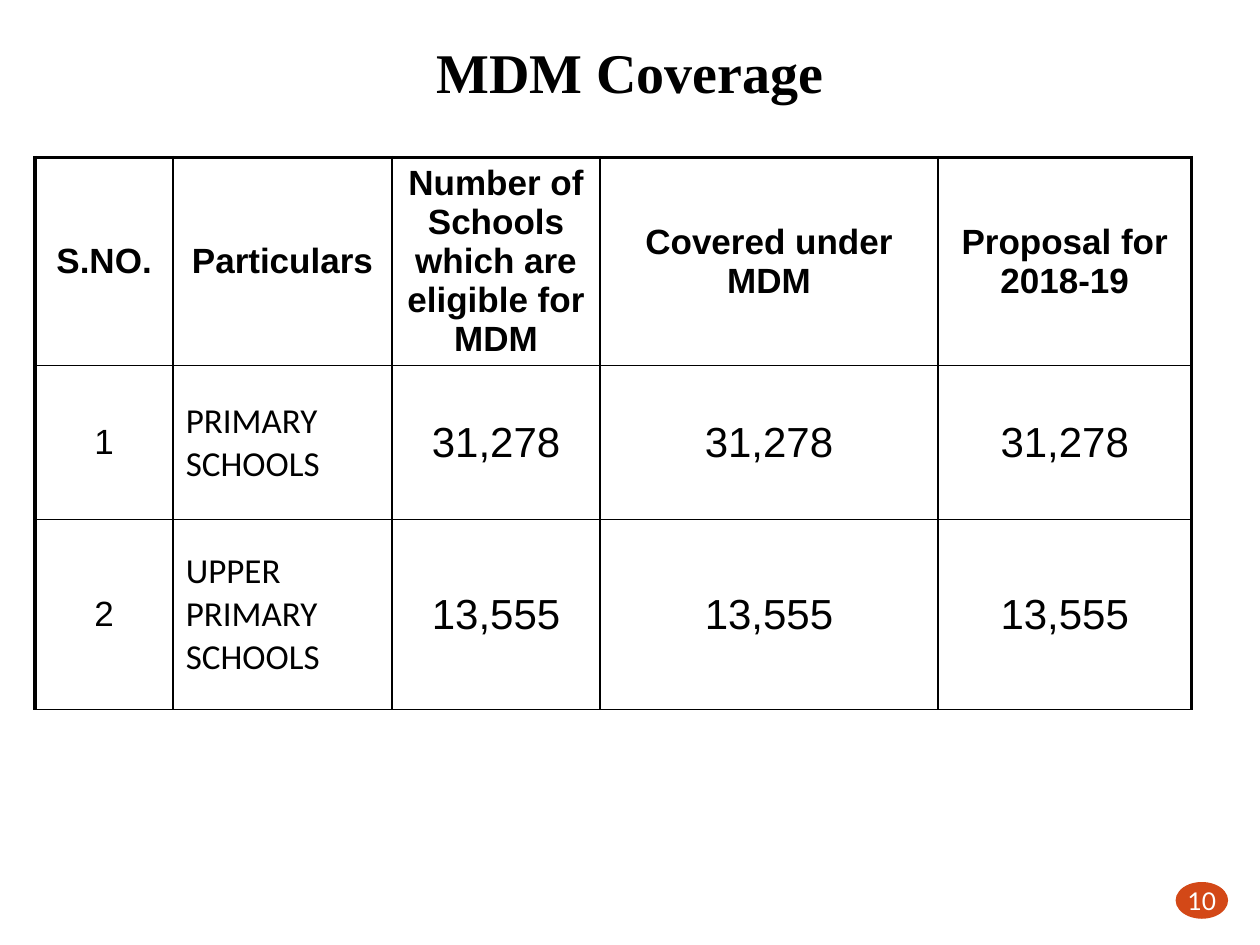
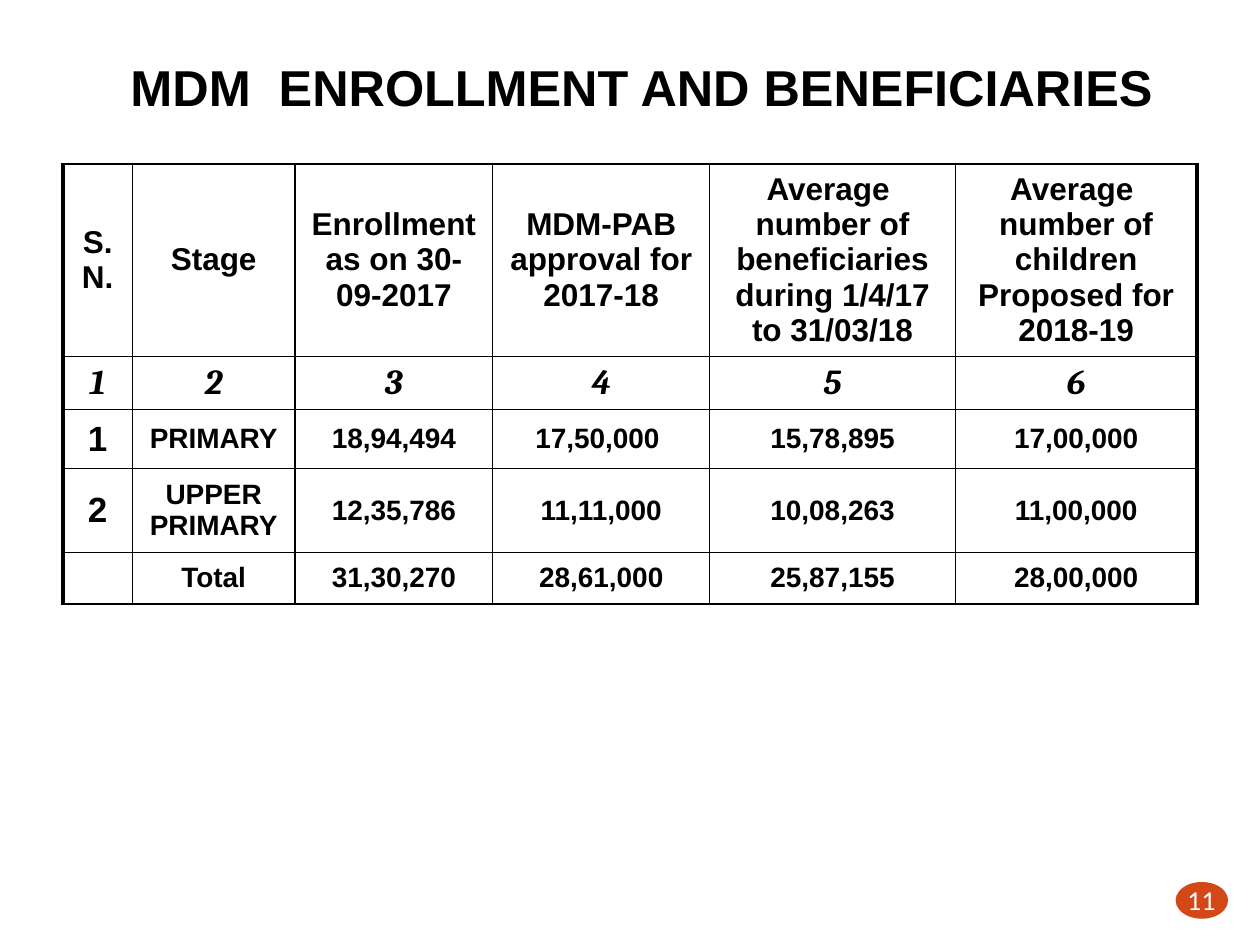
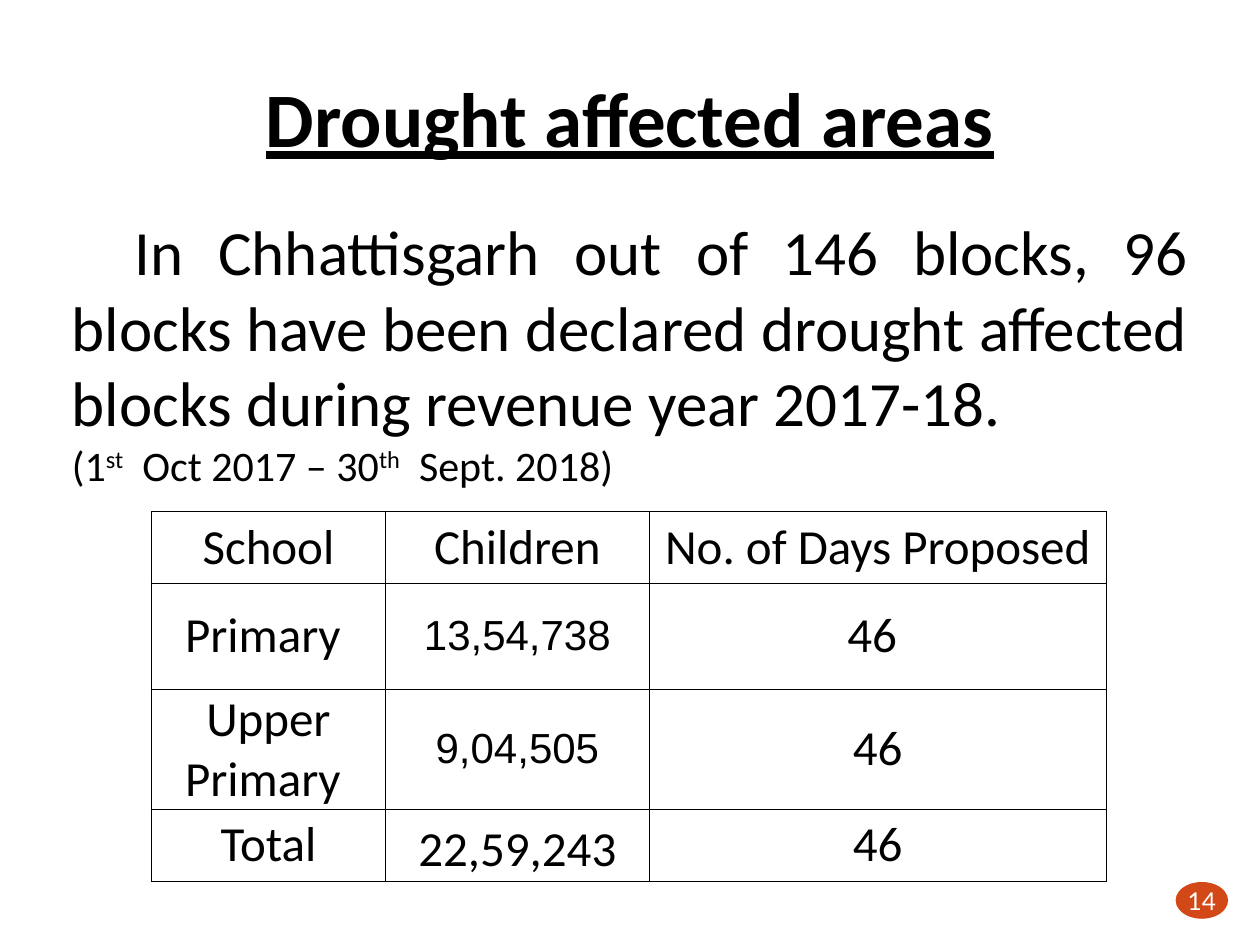
from dataclasses import dataclass

from lxml import etree
from pptx import Presentation
from pptx.dml.color import RGBColor
from pptx.enum import shapes, text
from pptx.oxml import ns
from pptx.util import Pt

CENTER, LEFT = text.PP_ALIGN.CENTER, text.PP_ALIGN.LEFT
MIDDLE, BOTTOM = text.MSO_ANCHOR.MIDDLE, text.MSO_ANCHOR.BOTTOM


@dataclass(frozen=True)
class Style:
    font: str
    size: float
    bold: bool = False
    italic: bool = False
    underline: bool = False
    align: int = CENTER
    anchor: int = MIDDLE


class Theme:
    ink = "000000"
    accent = "D34817"
    on_accent = "FFFFFF"
    styles = {
        "serif title": Style("Times New Roman", 32, bold=True),
        "sans title": Style("Arial", 28.8, bold=True),
        "underlined title": Style("Calibri", 44, bold=True, underline=True),
        "statement": Style("Calibri", 36),
        "period": Style("Calibri", 24),
        "badge": Style("Lato", 14),
        "large head": Style("Arial", 20, bold=True),
        "head": Style("Arial", 18, bold=True),
        "serial": Style("Arial", 20),
        "label": Style("Calibri", 20, align=LEFT),
        "count": Style("Arial", 24),
        "column number": Style("Cambria", 20, bold=True, italic=True),
        "bold serial": Style("Arial", 20, bold=True),
        "bold count": Style("Arial", 16, bold=True),
        "plain": Style("Calibri", 28),
        "plain low": Style("Calibri", 28, anchor=BOTTOM),
    }


# A row's styles apply from left to right; the last one fills the remaining columns.
COVERAGE = {
    "place": (20, 90), "widths": (79, 125, 119, 193, 145), "heights": (119, 88, 108.5),
    "line": 1, "edges": {"L": 2.25, "R": 2.25, "T": 2.25}, "inset": None,
    "rows": [
        (("S.NO.", "Particulars", "Number of Schools which are eligible for MDM",
          "Covered under MDM", "Proposal for 2018-19"), ["large head"]),
        (("1", "PRIMARY SCHOOLS", "31,278", "31,278", "31,278"),
         ["serial", "label", "count"]),
        (("2", "UPPER PRIMARY SCHOOLS", "13,555", "13,555", "13,555"),
         ["serial", "label", "count"]),
    ],
}
ENROLLMENT = {
    "place": (36, 93.6), "widths": (39.6, 93, 113, 124, 140.4, 138),
    "heights": (110, 30, 34, 48, 29),
    "line": 1, "edges": {"L": 2.25, "R": 2.25}, "inset": None,
    "rows": [
        (("S. N.", "Stage", "Enrollment as on 30-09-2017", "MDM-PAB approval for 2017-18",
          "Average  number of beneficiaries during 1/4/17 to 31/03/18",
          "Average  number of children Proposed for 2018-19"), ["head"]),
        (("1", "2", "3", "4", "5", "6"), ["column number"]),
        (("1", "PRIMARY", "18,94,494", "17,50,000 ", "15,78,895", "17,00,000"),
         ["bold serial", "bold count"]),
        (("2", "UPPER PRIMARY", "12,35,786", "11,11,000", "10,08,263", "11,00,000"),
         ["bold serial", "bold count"]),
        (("", "Total", "31,30,270", "28,61,000", "25,87,155", "28,00,000"), ["bold count"]),
    ],
}
DROUGHT = {
    "place": (86.4, 292.3), "widths": (134, 150.5, 261.4), "heights": (41, 60.5, 68, 41),
    "line": 0.5, "edges": {}, "inset": 0.7,
    "rows": [
        (("School", "Children", "No. of Days Proposed"), ["plain"]),
        (("Primary ", "13,54,738", "46 "), ["plain", "count", "plain"]),
        (("Upper Primary ", "9,04,505", "46"), ["plain", "count", "plain"]),
        (("Total", "22,59,243", "46"), ["plain", "plain low", "plain"]),
    ],
}
STATEMENT = ("\tIn Chhattisgarh out of 146 blocks, 96 blocks have been declared "
             "drought affected blocks during revenue year 2017-18. ")
PERIOD = [("(1", False), ("st", True), ("  Oct 2017 – 30", False),
          ("th", True), ("  Sept. 2018)", False)]
STATEMENT_BOX = (34, 118, 652, 211)

PAGES = [
    {"number": "10", "title": "MDM Coverage", "style": "serif title",
     "title_box": (36, 21.6, 648, 38), "table": COVERAGE},
    {"number": "11", "title": "MDM  ENROLLMENT AND BENEFICIARIES ", "style": "sans title",
     "title_box": (46.8, 21.6, 648, 56), "table": ENROLLMENT},
    {"number": "14", "title": "Drought affected areas", "style": "underlined title",
     "title_box": (36, 21.6, 648, 90), "table": DROUGHT, "statement": True},
]


def points(values):
    return [Pt(value) for value in values]


def format_para(para, style_name, color=Theme.ink, align=None):
    style = Theme.styles[style_name]
    para.alignment = style.align if align is None else align
    for span in para.runs:
        font = span.font
        font.name, font.size = style.font, Pt(style.size)
        font.bold, font.italic, font.underline = style.bold, style.italic, style.underline
        font.color.rgb = RGBColor.from_string(color)


def set_margins(target, value):
    target.margin_left = target.margin_right = Pt(value)
    target.margin_top = target.margin_bottom = Pt(value)


def add_title(page, content):
    title = page.shapes.title
    title.left, title.top, title.width, title.height = points(content["title_box"])
    frame = title.text_frame
    frame.text = content["title"]
    frame.auto_size = text.MSO_AUTO_SIZE.NONE
    frame.vertical_anchor = MIDDLE
    format_para(frame.paragraphs[0], content["style"])


def set_borders(cell, widths):
    properties = cell._tc.get_or_add_tcPr()
    for index, side in enumerate("LRTB"):
        line = etree.Element(ns.qn(f"a:ln{side}"), w=str(Pt(widths[side])))
        fill = etree.SubElement(line, ns.qn("a:solidFill"))
        etree.SubElement(fill, ns.qn("a:srgbClr"), val=Theme.ink)
        properties.insert(index, line)


def add_grid(page, grid):
    rows, widths, heights = grid["rows"], grid["widths"], grid["heights"]
    size = (sum(widths), sum(heights))
    table = page.shapes.add_table(len(rows), len(widths),
                                  *points(grid["place"] + size)).table
    table.first_row = table.horz_banding = False
    for column, width in zip(table.columns, widths):
        column.width = Pt(width)
    for r, (values, styles) in enumerate(rows):
        table.rows[r].height = Pt(heights[r])
        for c, value in enumerate(values):
            cell = table.cell(r, c)
            style_name = styles[min(c, len(styles) - 1)]
            cell.text = value
            cell.vertical_anchor = Theme.styles[style_name].anchor
            if grid["inset"] is not None:
                set_margins(cell, grid["inset"])
            format_para(cell.text_frame.paragraphs[0], style_name)
            cell.fill.background()
            outer = {"L": c == 0, "R": c == len(widths) - 1,
                     "T": r == 0, "B": r == len(rows) - 1}
            set_borders(cell, {side: grid["edges"].get(side, grid["line"])
                               if at_edge else grid["line"]
                               for side, at_edge in outer.items()})


def add_statement(page):
    frame = page.shapes.add_textbox(*points(STATEMENT_BOX)).text_frame
    frame.word_wrap = True
    frame.text = STATEMENT
    format_para(frame.paragraphs[0], "statement", align=text.PP_ALIGN.JUSTIFY)
    period = frame.add_paragraph()
    for wording, raised in PERIOD:
        span = period.add_run()
        span.text = wording
        if raised:
            span._r.get_or_add_rPr().set("baseline", "30000")
    format_para(period, "period", align=text.PP_ALIGN.JUSTIFY)


def add_badge(page, number):
    badge = page.shapes.add_shape(shapes.MSO_SHAPE.OVAL, *points((671.8, 504, 30, 21)))
    badge.shadow.inherit = False
    badge.fill.solid()
    badge.fill.fore_color.rgb = RGBColor.from_string(Theme.accent)
    badge.line.fill.background()
    frame = badge.text_frame
    frame.text = number
    frame.word_wrap = False
    frame.vertical_anchor = MIDDLE
    set_margins(frame, 0)
    format_para(frame.paragraphs[0], "badge", Theme.on_accent)


def main():
    deck = Presentation()
    deck.slide_width, deck.slide_height = Pt(720), Pt(540)
    title_only = deck.slide_layouts.get_by_name("Title Only")
    for content in PAGES:
        page = deck.slides.add_slide(title_only)
        add_title(page, content)
        if content.get("statement"):
            add_statement(page)
        add_grid(page, content["table"])
        add_badge(page, content["number"])
    deck.save("out.pptx")


if __name__ == "__main__":
    main()
